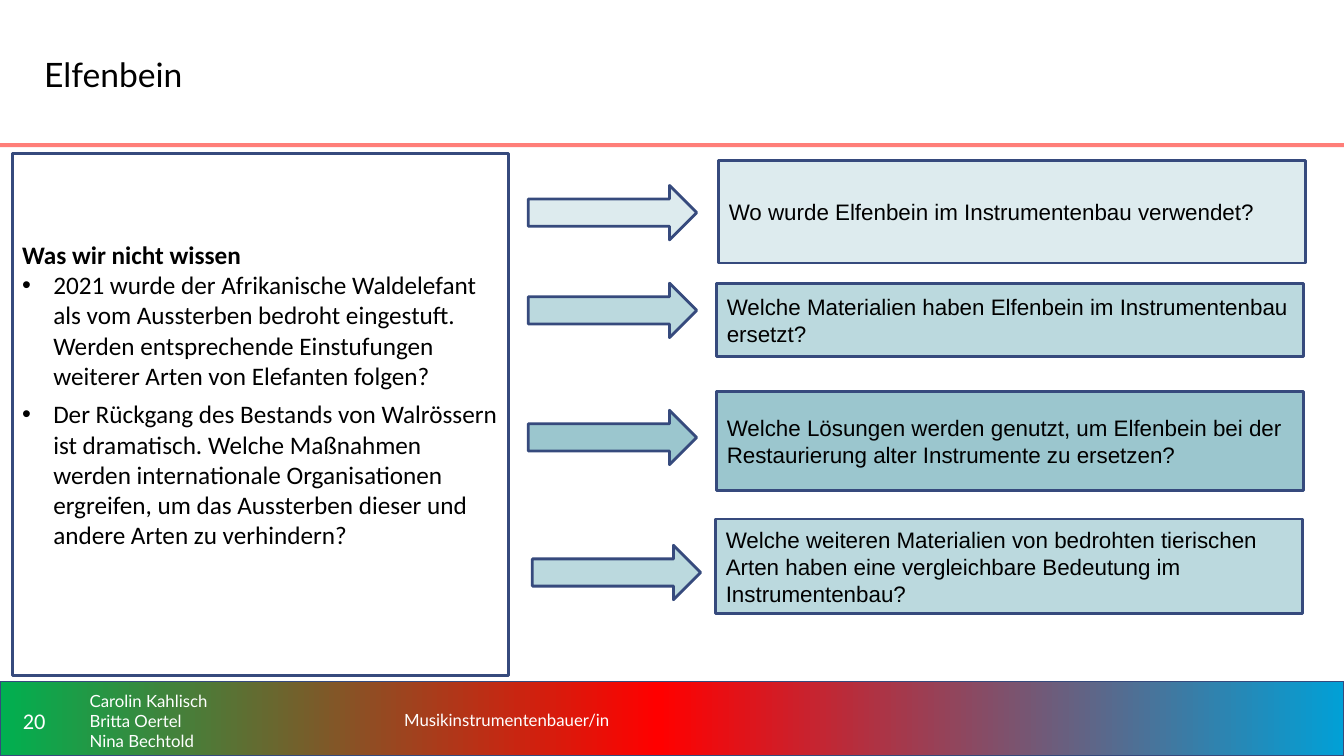
import copy

import pptx
import pptx.dml.color
import pptx.enum.shapes
import pptx.enum.text
import pptx.oxml
import pptx.oxml.ns
import pptx.util

Inches = pptx.util.Inches
Pt = pptx.util.Pt
SHAPES = pptx.enum.shapes.MSO_SHAPE
ALIGN = pptx.enum.text.PP_ALIGN

COLORS = {
    "black": "000000", "white": "FFFFFF", "outline": "364A7D", "rule": "FF7E79",
    "green": "00B050", "red": "FF0000", "blue": "01A0D6",
    "pale": "DDEBEE", "light": "BBD9DE", "medium": "9BC6CE",
}

OPEN_ISSUES = [
    "2021 wurde der Afrikanische Waldelefant als vom Aussterben bedroht eingestuft. "
    "Werden entsprechende Einstufungen weiterer Arten von Elefanten folgen?",
    "Der Rückgang des Bestands von Walrössern ist dramatisch. Welche Maßnahmen werden "
    "internationale Organisationen ergreifen, um das Aussterben dieser und andere Arten "
    "zu verhindern?",
]

# Question, colour, box (left, top, height), arrow (left, top)
QUESTIONS = [
    ("Wo wurde Elfenbein im Instrumentenbau verwendet?",
     "pale", (7.13, 1.59, 1.02), (5.24, 1.84)),
    ("Welche Materialien haben Elfenbein im Instrumentenbau ersetzt?",
     "light", (7.11, 2.81, 0.73), (5.24, 2.81)),
    ("Welche Lösungen werden genutzt, um Elfenbein bei der Restaurierung alter "
     "Instrumente zu ersetzen?",
     "medium", (7.11, 3.88, 0.99), (5.24, 4.07)),
    ("Welche weiteren Materialien von bedrohten tierischen Arten haben eine "
     "vergleichbare Bedeutung im Instrumentenbau?",
     "light", (7.1, 5.15, 0.94), (5.28, 5.41)),
]


def color(name):
    return pptx.dml.color.RGBColor.from_string(COLORS[name])


def add_block(slide, kind, box, fill=None, line=None, width=2):
    shape = slide.shapes.add_shape(kind, *map(Inches, box))
    shape.shadow.inherit = False
    if fill:
        shape.fill.solid()
        shape.fill.fore_color.rgb = color(fill)
    else:
        shape.fill.background()
    if line:
        shape.line.color.rgb = color(line)
        shape.line.width = Pt(width)
    else:
        shape.line.fill.background()
    return shape


def write(shape, lines, font, size, font_color="black", align=ALIGN.LEFT):
    frame = shape.text_frame
    frame.word_wrap = True
    frame.vertical_anchor = pptx.enum.text.MSO_ANCHOR.MIDDLE
    frame.text = "\n".join(lines)
    for paragraph in frame.paragraphs:
        paragraph.alignment = align
        paragraph.font.name = font
        paragraph.font.size = Pt(size)
        paragraph.font.color.rgb = color(font_color)
    return frame.paragraphs


def add_text(slide, box, lines, font, size, font_color="black", align=ALIGN.LEFT):
    shape = slide.shapes.add_textbox(*map(Inches, box))
    return write(shape, lines, font, size, font_color, align)


def add_bullet(paragraph, indent):
    properties = paragraph._p.get_or_add_pPr()
    properties.set("marL", str(Inches(indent)))
    properties.set("indent", str(-Inches(indent)))
    namespace = pptx.oxml.ns.nsdecls("a")
    bullet_font = pptx.oxml.parse_xml(f'<a:buFont {namespace} typeface="Arial"/>')
    bullet = pptx.oxml.parse_xml(f'<a:buChar {namespace} char="•"/>')
    first_run_default = properties.find(pptx.oxml.ns.qn("a:defRPr"))
    for element in (bullet_font, bullet):
        if first_run_default is None:
            properties.append(element)
        else:
            first_run_default.addprevious(element)


def fill_gradient(shape, stops):
    shape.fill.gradient()
    shape.fill.gradient_angle = 0
    stop_list = shape._element.spPr.find(
        f"{pptx.oxml.ns.qn('a:gradFill')}/{pptx.oxml.ns.qn('a:gsLst')}")
    stop_list.append(copy.deepcopy(stop_list[-1]))
    for stop, (position, name) in zip(shape.fill.gradient_stops, stops):
        stop.position = position
        stop.color.rgb = color(name)


def add_header(slide, box):
    left, top, width, height = box
    add_block(slide, SHAPES.RECTANGLE, (left, top + height, width, 0.04), "rule")
    add_text(slide, (left + 0.34, top + 0.14, 9.84, 1.18), ["Elfenbein"], "Lato", 24)


def add_footer(slide, box):
    left, top, width, height = box
    band = add_block(slide, SHAPES.RECTANGLE, box, line="outline", width=1)
    fill_gradient(band, [(0, "green"), (0.49, "red"), (1, "blue")])
    text_top = top + 0.08
    add_text(slide, (left, text_top, 0.68, 0.61), ["20"], "Calibri", 16, "white",
             ALIGN.CENTER)
    add_text(slide, (left + 0.79, text_top, 2.78, 0.62),
             ["Carolin Kahlisch", "Britta Oertel", "Nina Bechtold"], "Lato", 12, "white")
    add_text(slide, (left + 3.91, text_top, 3.94, 0.61),
             ["Musikinstrumentenbauer/in"], "Lato", 12, "white")


def add_open_issues(slide, box):
    panel = add_block(slide, SHAPES.RECTANGLE, box, line="outline")
    # The deeper bottom margin lifts the centred text
    panel.text_frame.margin_bottom = Inches(0.44)
    heading, *issues = write(panel, ["Was wir nicht wissen", *OPEN_ISSUES], "Calibri", 18)
    heading.font.bold = True
    for paragraph in issues:
        add_bullet(paragraph, 0.31)
    issues[-1].space_before = Pt(6)


def add_question(slide, box, arrow_box, text, fill):
    add_block(slide, SHAPES.RIGHT_ARROW, arrow_box, fill, "outline")
    write(add_block(slide, SHAPES.RECTANGLE, box, fill, "outline"), [text], "Arial", 16)


def main():
    presentation = pptx.Presentation()
    presentation.slide_width = Inches(13.33)
    presentation.slide_height = Inches(7.5)
    slide = presentation.slides.add_slide(presentation.slide_layouts[6])

    add_footer(slide, (0, 6.76, 13.33, 0.74))
    add_header(slide, (0, 0, 13.33, 1.42))
    add_open_issues(slide, (0.12, 1.52, 4.92, 5.18))
    for text, fill, (left, top, height), arrow in QUESTIONS:
        add_question(slide, (left, top, 5.82, height), (*arrow, 1.67, 0.54), text, fill)

    presentation.save("out.pptx")


if __name__ == "__main__":
    main()
